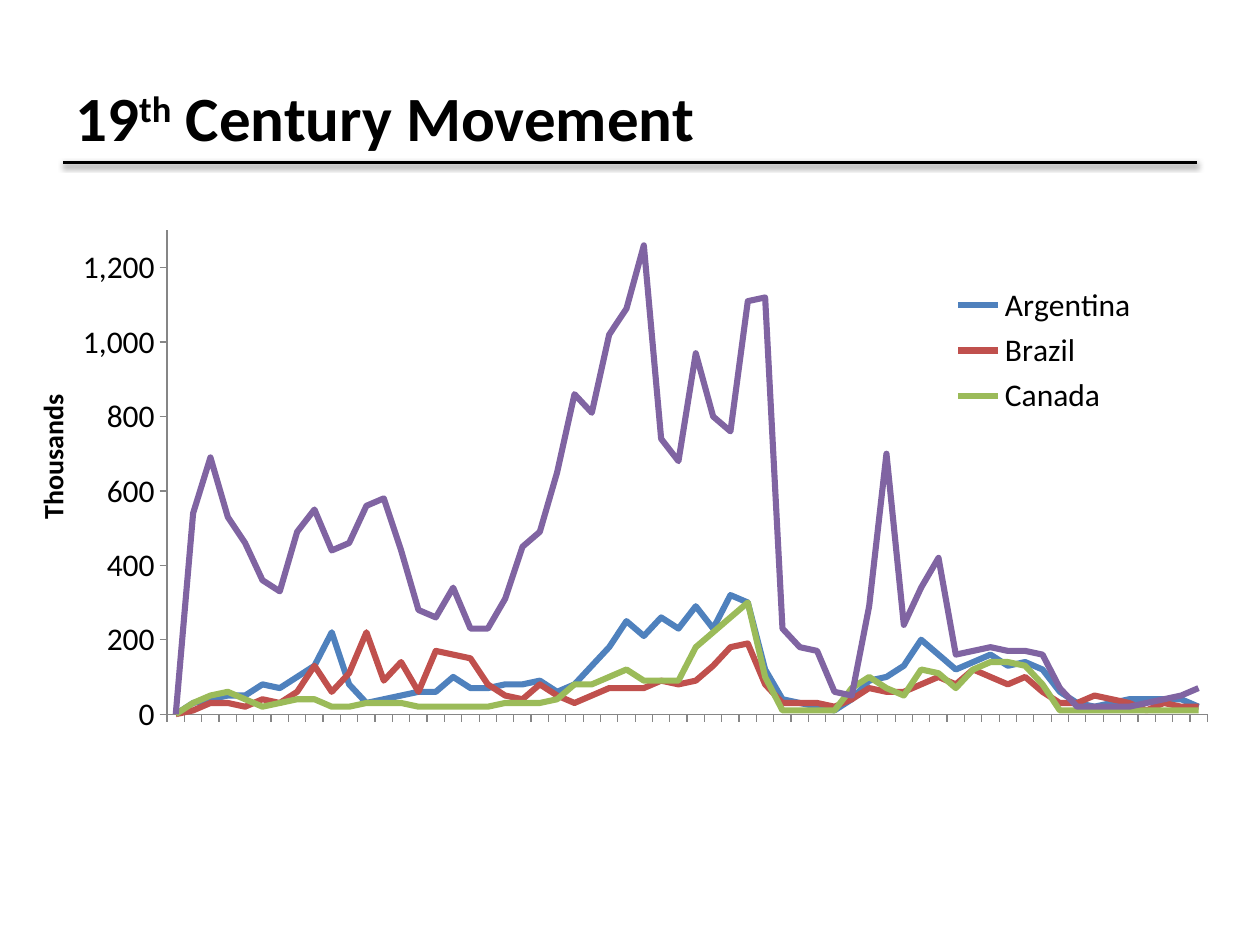
"""Build a slide with a line chart of migration over sixty years."""
from lxml import etree
from pptx import Presentation, util as u
from pptx.chart.data import CategoryChartData
from pptx.dml.color import RGBColor
from pptx.enum import chart as kinds, shapes, text
from pptx.oxml import parse_xml
from pptx.oxml.ns import nsdecls, qn

BLACK = RGBColor(0, 0, 0)
GRAY = RGBColor(0x86, 0x86, 0x86)
BLUE = RGBColor(0x4F, 0x81, 0xBD)
RED = RGBColor(0xC0, 0x50, 0x4D)
GREEN = RGBColor(0x9B, 0xBB, 0x59)
PURPLE = RGBColor(0x80, 0x64, 0xA2)

FLOWS = [
    ("Argentina", BLUE, [
        None, 30, 40, 50, 50, 80, 70, 100, 130, 220, 80, 30, 40, 50, 60,
        60, 100, 70, 70, 80, 80, 90, 60, 80, 130, 180, 250, 210, 260, 230,
        290, 230, 320, 300, 120, 40, 30, 20, 10, 40, 90, 100, 130, 200, 160,
        120, 140, 160, 130, 140, 120, 60, 30, 20, 30, 40, 40, 40, 40, 20]),
    ("Brazil", RED, [
        None, 10, 30, 30, 20, 40, 30, 60, 130, 60, 110, 220, 90, 140, 60,
        170, 160, 150, 80, 50, 40, 80, 50, 30, 50, 70, 70, 70, 90, 80,
        90, 130, 180, 190, 80, 30, 30, 30, 20, 40, 70, 60, 60, 80, 100,
        80, 120, 100, 80, 100, 60, 30, 30, 50, 40, 30, 10, 30, 20, 20]),
    ("Canada", GREEN, [
        None, 30, 50, 60, 40, 20, 30, 40, 40, 20, 20, 30, 30, 30, 20,
        20, 20, 20, 20, 30, 30, 30, 40, 80, 80, 100, 120, 90, 90, 90,
        180, 220, 260, 300, 100, 10, 10, 10, 10, 70, 100, 70, 50, 120, 110,
        70, 120, 140, 140, 130, 80, 10, 10, 10, 10, 10, 10, 10, 10, 10]),
    ("", PURPLE, [
        None, 540, 690, 530, 460, 360, 330, 490, 550, 440, 460, 560, 580, 440, 280,
        260, 340, 230, 230, 310, 450, 490, 650, 860, 810, 1020, 1090, 1260, 740, 680,
        970, 800, 760, 1110, 1120, 230, 180, 170, 60, 50, 290, 700, 240, 340, 420,
        160, 170, 180, 170, 170, 160, 70, 20, 20, 20, 20, 30, 40, 50, 70]),
]


def place(host, spot, x, y, wide, high, inner=False):
    """Give a chart part a fixed layout as fractions of the chart."""
    for old in host.findall(qn("c:layout")):
        host.remove(old)
    layout = parse_xml(f"<c:layout {nsdecls('c')}><c:manualLayout/></c:layout>")
    parts = [("layoutTarget", "inner")] if inner else []
    parts += [("xMode", "edge"), ("yMode", "edge"),
              ("x", x), ("y", y), ("w", wide), ("h", high)]
    for tag, val in parts:
        etree.SubElement(layout[0], qn("c:" + tag)).set("val", str(val))
    host.insert(spot, layout)


class Deck:
    """Hold the style and the current slide."""

    def __init__(self, face="Calibri"):
        self.face = face
        self.show = Presentation()
        self.show.slide_width, self.show.slide_height = u.Inches(10), u.Inches(7.5)
        self.slide = self.show.slides.add_slide(self.show.slide_layouts[6])

    def style(self, font, size, bold=False):
        """Apply the shared face and colour to a font."""
        font.name, font.size, font.bold = self.face, u.Pt(size), bold
        font.color.rgb = BLACK

    def label(self, box, runs, size, align, turn=0, wrap=True):
        """Add a bold line of text from (words, baseline) runs."""
        shape = self.slide.shapes.add_textbox(*map(u.Inches, box))
        shape.rotation = turn
        frame = shape.text_frame
        frame.word_wrap = wrap
        frame.vertical_anchor = text.MSO_ANCHOR.MIDDLE
        para = frame.paragraphs[0]
        para.alignment = align
        self.style(para.font, size, True)
        for words, base in runs:
            run = para.add_run()
            run.text = words
            if base:
                run.font._element.set("baseline", str(base))

    def rule(self, left, right, top):
        """Add a level black line with a soft shadow."""
        line = self.slide.shapes.add_connector(
            shapes.MSO_CONNECTOR.STRAIGHT,
            *map(u.Inches, (left, top, right, top)))
        line.line.color.rgb, line.line.width = BLACK, u.Pt(2)
        line._element.spPr.append(parse_xml(
            f"<a:effectLst {nsdecls('a')}>"
            '<a:outerShdw blurRad="40000" dist="20000" dir="5400000" rotWithShape="0">'
            '<a:srgbClr val="000000"><a:alpha val="38000"/></a:srgbClr>'
            "</a:outerShdw></a:effectLst>"))

    def graph(self, box, flows):
        """Add the line chart, with unnamed series left out of the legend."""
        data = CategoryChartData(number_format="#,##0")
        data.categories = [""] * len(flows[0][2])
        for name, _, vals in flows:
            data.add_series(name, vals)
        chart = self.slide.shapes.add_chart(
            kinds.XL_CHART_TYPE.LINE, *map(u.Inches, box), data).chart
        self.style(chart.font, 18)
        chart.has_title = False
        chart.plots[0].vary_by_categories = False
        for line, (_, color, _) in zip(chart.plots[0].series, flows):
            line.smooth = False
            line.marker.style = kinds.XL_MARKER_STYLE.NONE
            line.format.line.color.rgb = color
            line.format.line.width = u.Pt(3.5)
        for axis in (chart.category_axis, chart.value_axis):
            axis.has_major_gridlines = False
            axis.major_tick_mark = kinds.XL_TICK_MARK.OUTSIDE
            axis.format.line.color.rgb = GRAY
            axis.format.line.width = u.Pt(0.75)
        chart.category_axis.tick_label_position = kinds.XL_TICK_LABEL_POSITION.NONE
        scale = chart.value_axis
        scale.minimum_scale, scale.maximum_scale, scale.major_unit = 0, 1300, 200
        scale.tick_labels.number_format = "#,##0"
        scale.tick_labels.number_format_is_linked = False
        root = chart._chartSpace.chart
        place(root.plotArea, 0, 0.087, 0.059, 0.869, 0.81, True)
        root.find(qn("c:dispBlanksAs")).set("val", "zero")
        chart.has_legend = True
        chart.legend.position = kinds.XL_LEGEND_POSITION.RIGHT
        chart.legend.include_in_layout = False
        self.style(chart.legend.font, 18)
        key = chart.legend._element
        place(key, 1, 0.72, 0.14, 0.2, 0.24)
        for spot, (name, _, _) in enumerate(flows):
            if not name:
                key.insert(1, parse_xml(
                    f'<c:legendEntry {nsdecls("c")}><c:idx val="{spot}"/>'
                    '<c:delete val="1"/></c:legendEntry>'))


def main():
    deck = Deck()
    deck.rule(0.5, 9.5, 1.29)
    deck.label((0.5, 0.3, 9, 1.25),
               [("19", 0), ("th", 30000), (" Century Movement", 0)],
               36, text.PP_ALIGN.LEFT)
    deck.graph((0.5, 1.55, 9.5, 4.74), FLOWS)
    deck.label((-0.19, 3.44, 1.21, 0.37), [("Thousands", 0)],
               16, text.PP_ALIGN.CENTER, 270, False)
    deck.show.save("out.pptx")


if __name__ == "__main__":
    main()
